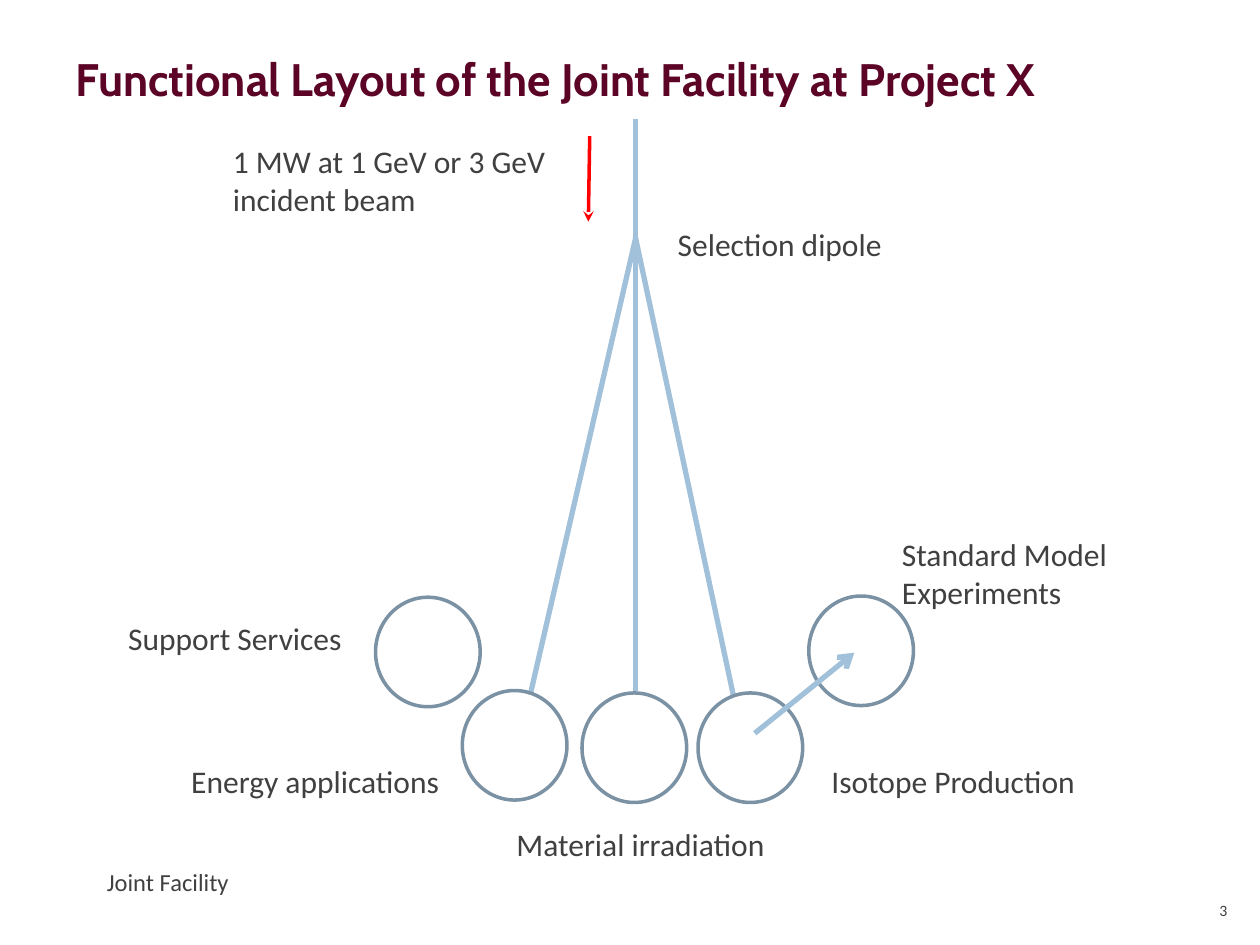
from lxml import etree
from pptx import Presentation
from pptx.dml.color import RGBColor
from pptx.enum.shapes import MSO_CONNECTOR, MSO_SHAPE
from pptx.enum.text import MSO_ANCHOR, MSO_AUTO_SIZE, PP_ALIGN
from pptx.oxml.ns import qn
from pptx.util import Pt

COLORS = {"title": "5C0426", "text": "404040", "beam": "A1C0DA",
          "station": "7B91A4", "incident": "FF0000"}
STATION_SIZE = (59.8, 62.6)


def color(name):
    return RGBColor.from_string(COLORS[name])


def write(shape, text, size=18, font="Calibri", ink="text", bold=False,
          align=PP_ALIGN.LEFT, wrap=True):
    """Fill a shape with one paragraph per line of text."""
    frame = shape.text_frame
    frame.word_wrap = wrap
    frame.vertical_anchor = MSO_ANCHOR.TOP
    frame.auto_size = MSO_AUTO_SIZE.NONE if wrap else MSO_AUTO_SIZE.SHAPE_TO_FIT_TEXT
    for index, line in enumerate(text.split("\n")):
        para = frame.paragraphs[0] if index == 0 else frame.add_paragraph()
        para.alignment = align
        span = para.add_run()
        span.text = line
        span.font.size = Pt(size)
        span.font.name = font
        span.font.bold = bold
        span.font.color.rgb = color(ink)


def add_text(page, box, text, **style):
    write(page.shapes.add_textbox(*map(Pt, box)), text, **style)


def add_line(page, start, end, ink="beam", width=3, arrow=None):
    line = page.shapes.add_connector(MSO_CONNECTOR.STRAIGHT, *map(Pt, start + end))
    line.line.color.rgb = color(ink)
    line.line.width = Pt(width)
    if arrow:
        outline = line.line._get_or_add_ln()
        etree.SubElement(outline, qn("a:tailEnd"), type=arrow)
    etree.SubElement(line._element.spPr, qn("a:effectLst"))


def add_title(page, box, text):
    title = page.shapes.title
    title.left, title.top, title.width, title.height = map(Pt, box)
    write(title, text, size=26, font="Cabin", ink="title", bold=True)
    title.text_frame.margin_top = Pt(5)


def add_beamlines(page, left, top):
    """Draw the incoming beam and its branches from the selection dipole."""
    for start, end in (((297, 0), (297, 327)),
                       ((297, 69), (237, 329)),
                       ((297, 67), (353, 329))):
        add_line(page, (left + start[0], top + start[1]),
                 (left + end[0], top + end[1]))


def add_stations(page, left, top):
    for x, y in ((198.2, 326.6), (332.9, 328), (266.6, 328),
                 (396.2, 272.6), (148.6, 273.3)):
        station = page.shapes.add_shape(
            MSO_SHAPE.OVAL, Pt(left + x), Pt(top + y), *map(Pt, STATION_SIZE))
        station.shadow.inherit = False
        station.fill.background()
        station.line.color.rgb = color("station")
        station.line.width = Pt(2)


def add_labels(page, left, top):
    for x, y, width, height, text in (
            (0.2, 282, 136.8, 29, "Support Services"),
            (442.3, 234.4, 132.5, 50.4, "Standard Model\nExperiments"),
            (402, 364, 154, 29, "Isotope Production"),
            (222, 400, 157.7, 29, "Material irradiation"),
            (36.2, 364, 157, 29, "Energy applications"),
            (314.2, 57.3, 131.8, 29, "Selection dipole"),
            (60, 9.8, 198.7, 51, "1 MW at 1 GeV or 3 GeV\nincident beam")):
        add_text(page, (left + x, top + y, width, height), text, wrap=False)


def add_direction_arrows(page, left, top):
    add_line(page, (left + 271, top + 9.8), (left + 270.2, top + 58.7),
             ink="incident", width=2, arrow="stealth")
    add_line(page, (left + 365.3, top + 351), (left + 422.2, top + 305),
             arrow="arrow")


def add_diagram(page, left, top):
    for add_part in (add_beamlines, add_stations, add_labels, add_direction_arrows):
        add_part(page, left, top)


def add_footer(page, left, top):
    add_text(page, (left, top, 468, 18), "Joint Facility", size=14)
    add_text(page, (left + 624.2, top + 19.4, 30.2, 28.8), "3", size=9,
             align=PP_ALIGN.RIGHT)


def main():
    deck = Presentation()
    deck.slide_width, deck.slide_height = Pt(720), Pt(540)
    page = deck.slides.add_slide(deck.slide_layouts[5])
    add_title(page, (36, 24, 648, 50),
              "Functional Layout of the Joint Facility at Project X")
    add_diagram(page, 66, 68)
    add_footer(page, 54, 491.8)
    deck.save("out.pptx")


if __name__ == "__main__":
    main()
